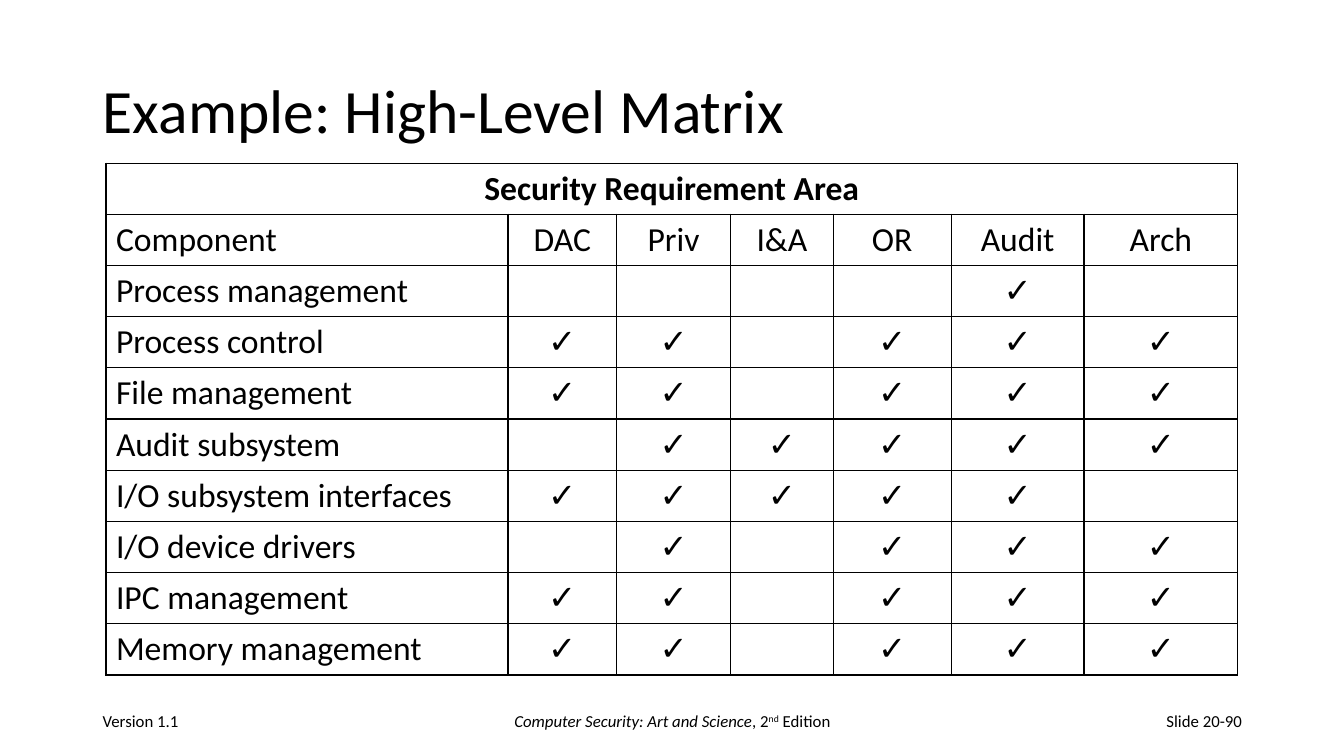
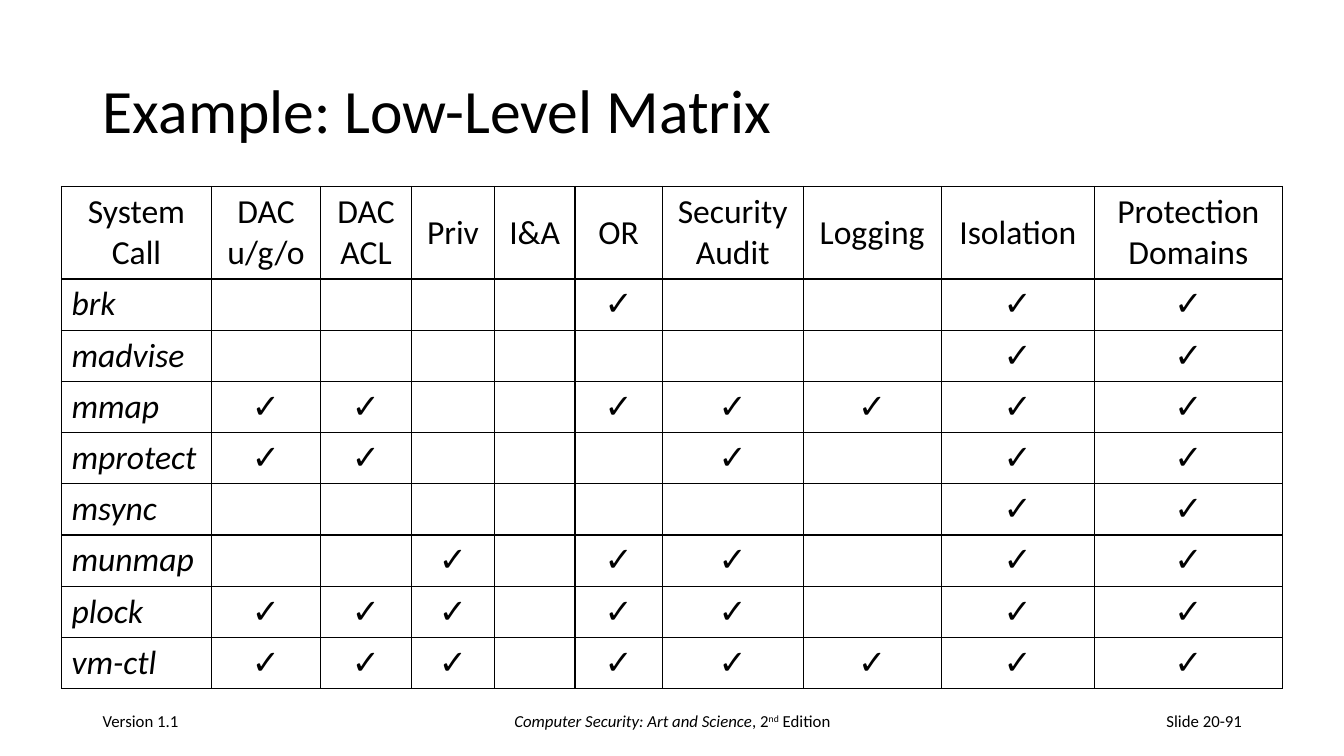
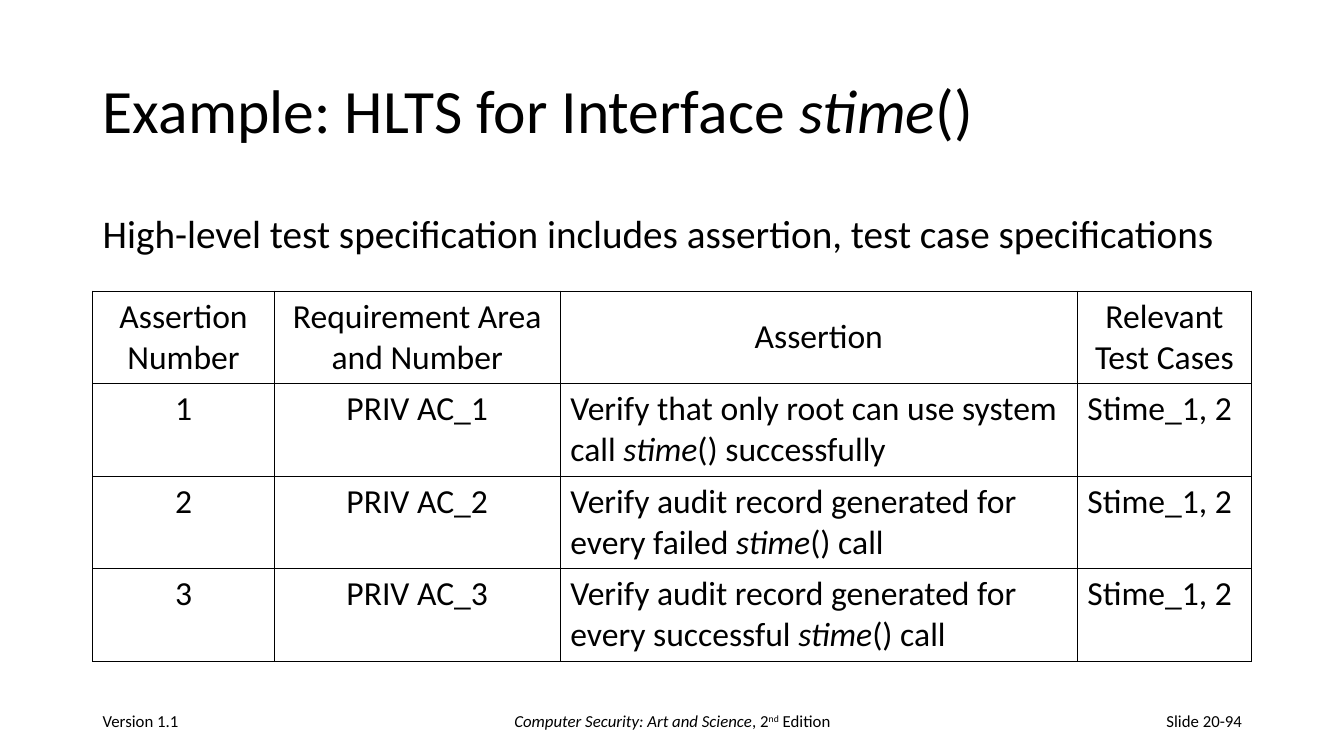
from dataclasses import dataclass

from lxml import etree
from pptx import Presentation
from pptx.dml.color import RGBColor
from pptx.enum.text import MSO_ANCHOR, MSO_AUTO_SIZE, PP_ALIGN
from pptx.oxml.ns import qn
from pptx.slide import Slide
from pptx.table import _Cell
from pptx.text.text import TextFrame
from pptx.util import Cm, Pt

ALIGN = {"l": PP_ALIGN.LEFT, "c": PP_ALIGN.CENTER, "r": PP_ALIGN.RIGHT}
TOP, MIDDLE = MSO_ANCHOR.TOP, MSO_ANCHOR.MIDDLE
NO_FIT = MSO_AUTO_SIZE.NONE
GROW = MSO_AUTO_SIZE.SHAPE_TO_FIT_TEXT
TITLE_ONLY = 5
COLOR = {"ink": "000000", "paper": "FFFFFF"}
FONT = "Calibri"
MARGIN = 2.34
LINE, PAIR = 1.29, 2.33


@dataclass
class Box:
    left: float
    top: float
    width: float
    height: float

    def cm(self) -> list[Cm]:
        return [Cm(n) for n in (self.left, self.top, self.width, self.height)]


@dataclass
class Grid:
    left: float
    top: float
    cols: list[float]
    head: float
    body: float
    aligns: tuple[str, str]
    rows: list[list[str]]


@dataclass
class Page:
    title: str
    number: str
    grid: Grid
    lead: str = ""


def marks(name: str, code: str) -> list[str]:
    return [name, *code.replace("-", " ")]


def write(frame: TextFrame, text: str, size: float, align: str = "l",
          bold: bool = False, space: float = 1.0) -> None:
    for n, line in enumerate(text.split("\n")):
        para = frame.add_paragraph() if n else frame.paragraphs[0]
        para.alignment = ALIGN[align]
        para.line_spacing = space
        font = para.font
        font.name, font.size, font.bold = FONT, Pt(size), bold
        font.color.rgb = RGBColor.from_string(COLOR["ink"])
        for i, part in enumerate(line.split("*")):
            for j, bit in enumerate(part.split("^")):
                if not bit:
                    continue
                run = para.add_run()
                run.text = bit
                if i % 2:
                    run.font.italic = True
                if j % 2:
                    run._r.get_or_add_rPr().set("baseline", "30000")


def label(slide: Slide, box: Box, text: str, size: float,
          align: str = "l") -> TextFrame:
    frame = slide.shapes.add_textbox(*box.cm()).text_frame
    frame.word_wrap = True
    frame.vertical_anchor = MIDDLE
    write(frame, text, size, align)
    return frame


def rule(cell: _Cell) -> None:
    props = cell._tc.get_or_add_tcPr()
    for side in ("lnL", "lnR", "lnT", "lnB"):
        edge = etree.SubElement(props, qn(f"a:{side}"), w=str(Pt(1)))
        fill = etree.SubElement(edge, qn("a:solidFill"))
        etree.SubElement(fill, qn("a:srgbClr"), val=COLOR["ink"])
    cell.fill.solid()
    cell.fill.fore_color.rgb = RGBColor.from_string(COLOR["paper"])


def draw_grid(slide: Slide, grid: Grid) -> None:
    high = [grid.head] + [grid.body] * (len(grid.rows) - 1)
    box = Box(grid.left, grid.top, sum(grid.cols), sum(high))
    table = slide.shapes.add_table(len(high), len(grid.cols), *box.cm()).table
    table.first_row = table.horz_banding = False
    for col, width in zip(table.columns, grid.cols):
        col.width = Cm(width)
    for r, texts in enumerate(grid.rows):
        table.rows[r].height = Cm(high[r])
        for c in range(len(grid.cols)):
            rule(table.cell(r, c))
        banner = len(texts) == 1
        if banner:
            table.cell(r, 0).merge(table.cell(r, len(grid.cols) - 1))
        for c, text in enumerate(texts):
            if not text.strip():
                continue
            cell = table.cell(r, c)
            cell.vertical_anchor = TOP if r else MIDDLE
            align = "c" if banner else grid.aligns[r > 0][c]
            write(cell.text_frame, text, 24, align, banner)


def draw_foot(slide: Slide, number: str) -> None:
    top, height = 17.65, 1.02
    book = "*Computer Security: Art and Science*, 2^nd^ Edition"
    label(slide, Box(MARGIN, top, 7.62, height), "Version 1.1", 12)
    label(slide, Box(11.23, top, 11.43, height), book, 12, "c")
    label(slide, Box(23.93, top, 7.62, height), f"Slide {number}", 12, "r")


def draw_page(deck: Presentation, page: Page) -> None:
    slide = deck.slides.add_slide(deck.slide_layouts[TITLE_ONLY])
    title = slide.shapes.title
    box = Box(MARGIN, 1.02, 29.21, 3.68)
    title.left, title.top, title.width, title.height = box.cm()
    title.text_frame.auto_size = NO_FIT
    title.text_frame.vertical_anchor = MIDDLE
    write(title.text_frame, page.title, 44, space=0.9)
    draw_grid(slide, page.grid)
    draw_foot(slide, page.number)
    if page.lead:
        frame = label(slide, Box(MARGIN, 5.16, 28.83, 1.45), page.lead, 28)
        frame.word_wrap = False
        frame.vertical_anchor = TOP
        frame.auto_size = GROW


HIGH = Grid(
    2.67, 4.11, [10.13, 2.74, 2.87, 2.59, 2.97, 3.35, 3.87], LINE, LINE,
    ("lcccccc", "lcccccc"),
    [
        ["Security Requirement Area"],
        ["Component", "DAC", "Priv", "I&A", "OR", "Audit", "Arch"],
        marks("Process management", "----✓-"),
        marks("Process control", "✓✓-✓✓✓"),
        marks("File management", "✓✓-✓✓✓"),
        marks("Audit subsystem", "-✓✓✓✓✓"),
        marks("I/O subsystem interfaces", "✓✓✓✓✓-"),
        marks("I/O device drivers", "-✓-✓✓✓"),
        marks("IPC management", "✓✓-✓✓✓"),
        marks("Memory management", "✓✓-✓✓✓"),
    ],
)

LOW = Grid(
    1.55, 4.7,
    [3.78, 2.75, 2.29, 2.09, 2.03, 2.2, 3.55, 3.48, 3.86, 4.74], PAIR, LINE,
    ("cccccccccc", "lccccccccc"),
    [
        ["System Call", "DAC u/g/o", "DAC\nACL", "Priv", "I&A", "OR",
         "Security\nAudit", "Logging", "Isolation", "Protection Domains"],
        marks("*brk*", "----✓--✓✓"),
        marks("*madvise*", "-------✓✓"),
        marks("*mmap*", "✓✓--✓✓✓✓✓"),
        marks("*mprotect*", "✓✓---✓-✓✓"),
        marks("*msync*", "-------✓✓"),
        marks("*munmap*", "--✓-✓✓-✓✓"),
        marks("*plock*", "✓✓✓-✓✓-✓✓"),
        marks("*vm-ctl*", "✓✓✓-✓✓✓✓✓"),
    ],
)

CLAIMS = [
    "Verify that only root can use system call *stime*() successfully",
    "Verify audit record generated for every failed *stime*() call",
    "Verify audit record generated for every successful *stime*() call",
]

TESTS = Grid(
    MARGIN, 7.34, [4.57, 7.21, 13.03, 4.39], PAIR, PAIR, ("cccc", "ccll"),
    [
        ["Assertion Number", "Requirement Area and Number", "Assertion",
         "Relevant Test Cases"],
        *([str(n), f"PRIV AC_{n}", claim, "Stime_1, 2"]
          for n, claim in enumerate(CLAIMS, 1)),
    ],
)

PAGES = [
    Page("Example: High-Level Matrix", "20-90", HIGH),
    Page("Example: Low-Level Matrix", "20-91", LOW),
    Page("Example: HLTS for Interface *stime*()", "20-94", TESTS,
         "High-level test specification includes assertion, "
         "test case specifications"),
]


def main() -> None:
    deck = Presentation()
    deck.slide_width, deck.slide_height = Cm(33.87), Cm(19.05)
    for page in PAGES:
        draw_page(deck, page)
    deck.save("out.pptx")


if __name__ == "__main__":
    main()
